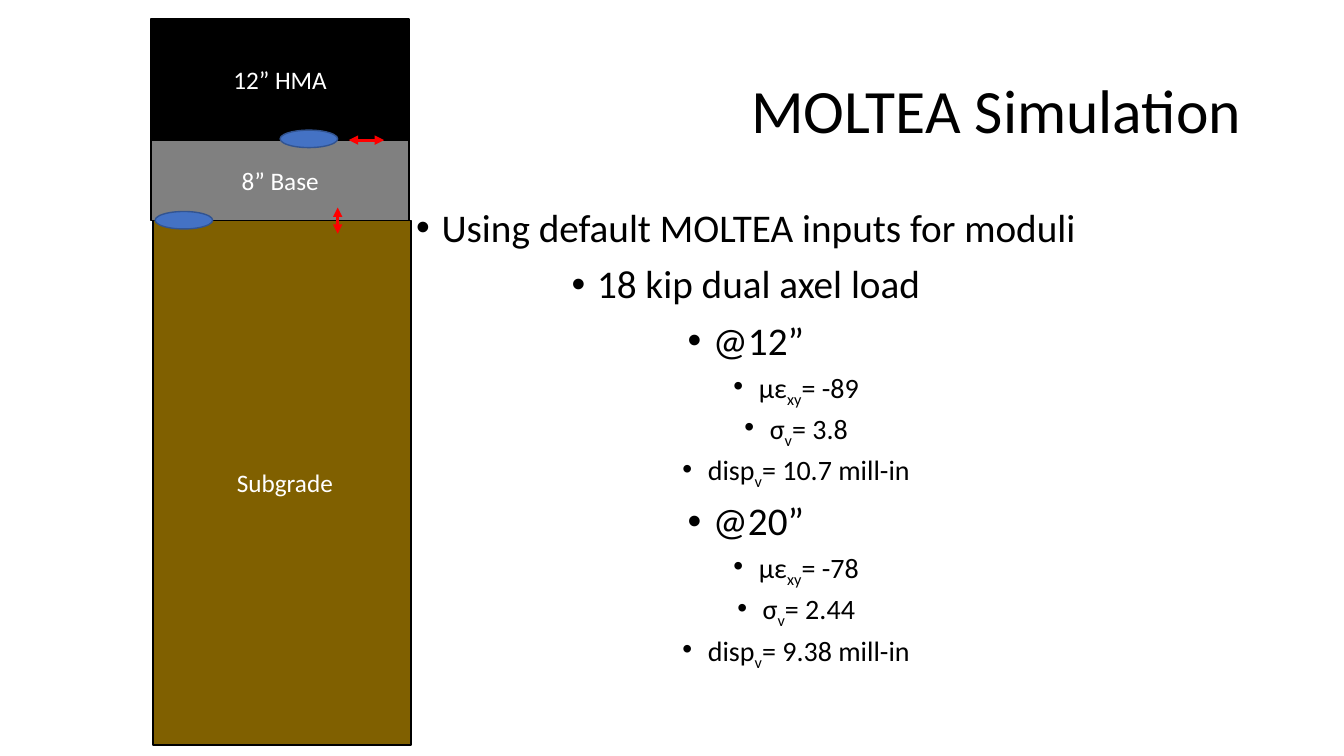
import pptx
import pptx.util
import pptx.dml.color
import pptx.enum.shapes
import pptx.enum.text
import pptx.oxml
import pptx.oxml.ns

Cm = pptx.util.Cm
Pt = pptx.util.Pt
RGB = pptx.dml.color.RGBColor
Shape = pptx.enum.shapes.MSO_SHAPE
Align = pptx.enum.text.PP_ALIGN
MIDDLE = pptx.enum.text.MSO_ANCHOR.MIDDLE

BLACK = RGB(0x00, 0x00, 0x00)
WHITE = RGB(0xFF, 0xFF, 0xFF)
GRAY = RGB(0x80, 0x80, 0x80)
BROWN = RGB(0x80, 0x60, 0x00)
BLUE = RGB(0x44, 0x72, 0xC4)
NAVY = RGB(0x32, 0x54, 0x91)
RED = RGB(0xFF, 0x00, 0x00)

# Layers from the top down: label, fill, left edge, height (cm)
LAYERS = [
    ("12” HMA", BLACK, 3.81, 3.05),
    ("8” Base", GRAY, 3.81, 2.03),
    (" Subgrade", BROWN, 3.86, 13.21),
]
LAYER_TOP = 0.48
LAYER_WIDTH = 6.5

# Results by depth: strain, stress, shift
DEPTHS = [
    ("@12”", "-89", "3.8", "10.7"),
    ("@20”", "-78", "2.44", "9.38"),
]
MAIN = {"size": 28, "left": 0.64, "level": 0, "before": 10}
SUB = {"size": 20, "left": 3.18, "level": 2, "before": 5}


def apply(target, values):
    for name, value in values.items():
        setattr(target, name, value)


def make(parent, tag, **values):
    """Add a drawing element with the given attributes."""
    node = pptx.oxml.parse_xml(f"<{tag} {pptx.oxml.ns.nsdecls('a')}/>")
    for name, value in values.items():
        node.set(name, value)
    parent.append(node)
    return node


def add_run(para, text, size, color=BLACK):
    run = para.add_run()
    run.text = text
    apply(run.font, {"name": "Calibri", "size": Pt(size)})
    run.font.color.rgb = color
    return run


def add_box(slide, left, top, width, height, **frame):
    box = slide.shapes.add_textbox(Cm(left), Cm(top), Cm(width), Cm(height))
    apply(box.text_frame, {"word_wrap": True, **frame})
    return box.text_frame


def add_shape(slide, kind, left, top, width, height, fill, line):
    shape = slide.shapes.add_shape(
        kind, Cm(left), Cm(top), Cm(width), Cm(height))
    shape.shadow.inherit = False
    shape.fill.solid()
    shape.fill.fore_color.rgb = fill
    shape.line.color.rgb = line
    shape.line.width = Pt(1)
    return shape


def add_layer(slide, label, fill, left, top, height):
    shape = add_shape(slide, Shape.RECTANGLE, left, top, LAYER_WIDTH, height,
                      fill, BLACK)
    shape.text_frame.vertical_anchor = MIDDLE
    para = shape.text_frame.paragraphs[0]
    para.alignment = Align.CENTER
    add_run(para, label, 18, WHITE)


def add_arrow(slide, *ends):
    """Draw a red arrow with a head at both ends."""
    arrow = slide.shapes.add_connector(
        pptx.enum.shapes.MSO_CONNECTOR.STRAIGHT, *map(Cm, ends))
    arrow.line.color.rgb = RED
    arrow.line.width = Pt(2.25)
    line = arrow.line._get_or_add_ln()
    for tag in ("a:headEnd", "a:tailEnd"):
        make(line, tag, type="triangle")
    make(arrow._element.spPr, "a:effectLst")


def add_bullet(para, style, text, index="", value=""):
    apply(para, {"alignment": Align.CENTER, "level": style["level"],
                 "line_spacing": 0.9, "space_before": Pt(style["before"])})
    props = para._p.get_or_add_pPr()
    props.set("marL", str(Cm(style["left"])))
    props.set("indent", str(Cm(-0.64)))
    make(props, "a:buFont", typeface="Arial")
    make(props, "a:buChar", char="•")
    add_run(para, text, style["size"])
    if index:
        low = add_run(para, index, style["size"])
        low.font._element.set("baseline", "-25000")
        add_run(para, f"= {value}", style["size"])


def list_points():
    points = [(MAIN, "Using default MOLTEA inputs for moduli"),
              (MAIN, "18 kip dual axel load")]
    for depth, strain, stress, shift in DEPTHS:
        points += [(MAIN, depth),
                   (SUB, "µε", "xy", strain),
                   (SUB, "σ", "v", stress),
                   (SUB, "disp", "v", f"{shift} mill-in")]
    return points


def main():
    deck = pptx.Presentation()
    apply(deck, {"slide_width": Cm(33.87), "slide_height": Cm(19.05)})
    slide = deck.slides.add_slide(deck.slide_layouts[6])

    # Title
    frame = add_box(slide, 2.33, 1.01, 29.21, 3.68, vertical_anchor=MIDDLE)
    title = frame.paragraphs[0]
    apply(title, {"alignment": Align.RIGHT, "line_spacing": 0.9})
    add_run(title, "MOLTEA Simulation", 44)

    # Bullet list
    frame = add_box(slide, 4.19, 5.13, 29.21, 12.09)
    for num, point in enumerate(list_points()):
        para = frame.add_paragraph() if num else frame.paragraphs[0]
        add_bullet(para, *point)

    # Road layers, each resting on the next
    top = LAYER_TOP
    for label, fill, left, height in LAYERS:
        add_layer(slide, label, fill, left, top, height)
        top += height

    # Load points and strain arrows
    add_arrow(slide, 8.79, 3.53, 9.68, 3.53)
    for left, top in ((3.91, 5.33), (7.06, 3.28)):
        add_shape(slide, Shape.OVAL, left, top, 1.45, 0.44, BLUE, NAVY)
    add_arrow(slide, 8.51, 5.89, 8.51, 5.23)

    deck.save("out.pptx")


if __name__ == "__main__":
    main()
